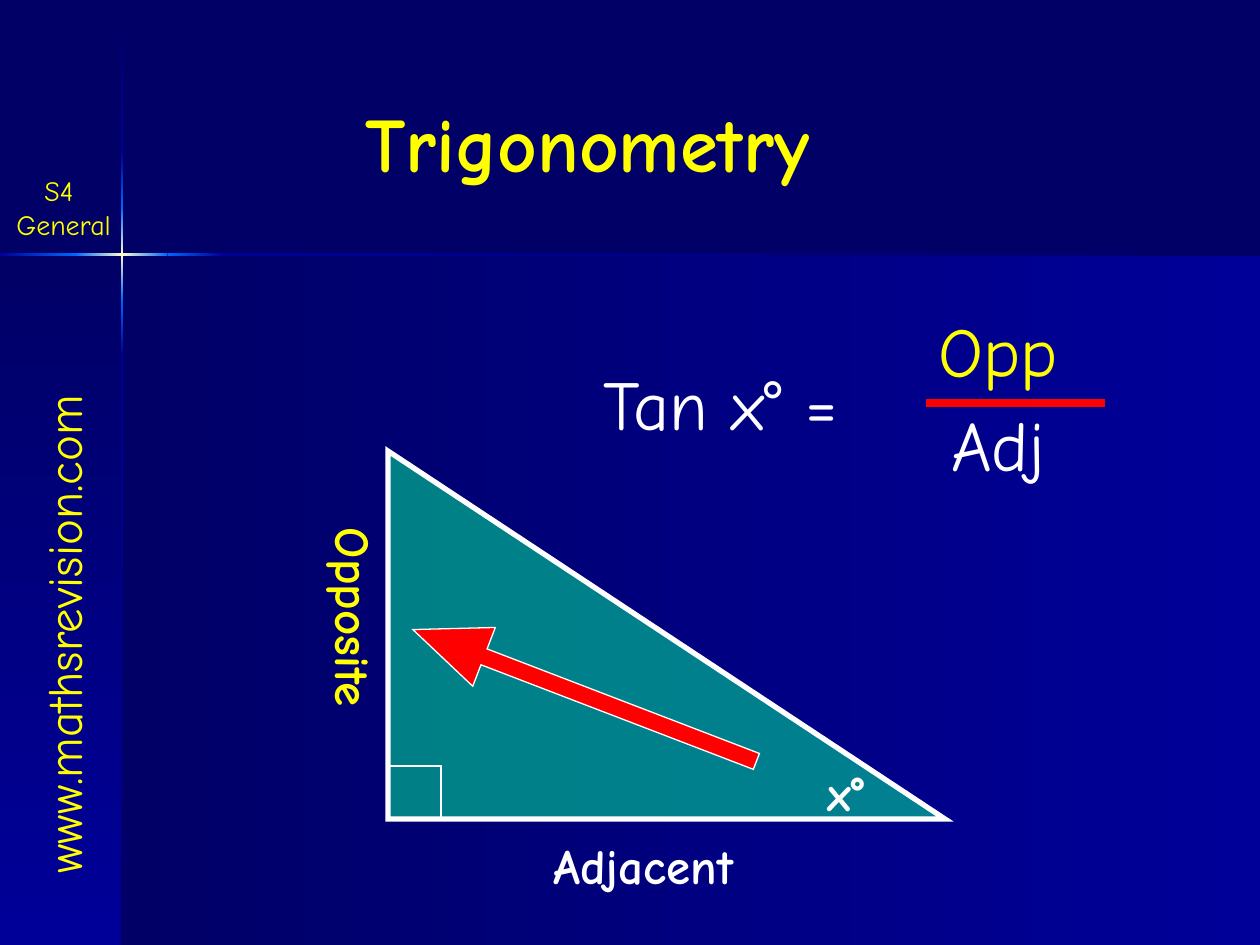
from lxml.etree import SubElement
from pptx import Presentation
from pptx.dml.color import RGBColor
from pptx.enum.shapes import MSO_CONNECTOR, MSO_SHAPE
from pptx.enum.text import MSO_ANCHOR, MSO_AUTO_SIZE, PP_ALIGN
from pptx.oxml.ns import qn
from pptx.util import Inches, Pt

NAVY = RGBColor(0x00, 0x00, 0x66)
BLUE = RGBColor(0x00, 0x00, 0x99)
BRIGHT = RGBColor(0x00, 0x66, 0xFF)
CREAM = RGBColor(0xFF, 0xFF, 0xCC)
YELLOW = RGBColor(0xFF, 0xFF, 0x00)
WHITE = RGBColor(0xFF, 0xFF, 0xFF)
RED = RGBColor(0xFF, 0x00, 0x00)
GREEN = RGBColor(0x00, 0xFF, 0x99)
FONT = "Comic Neue"

W, H = 10, 7.5
CROSS_X, CROSS_Y = 0.97, 2.02   # where the two glowing rules meet
RULE = 0.02
DOWN, RIGHT = 270, 0            # gradient directions

# Glowing rules: start, end, first colour, last colour
VERTICAL_RULE = [
    (0.01, 1.21, NAVY, BLUE),
    (1.21, 1.65, BLUE, BRIGHT),
    (1.65, CROSS_Y, BRIGHT, CREAM),
    (CROSS_Y, 2.38, CREAM, BRIGHT),
    (2.38, 2.82, BRIGHT, BLUE),
    (2.82, H, BLUE, NAVY),
]
HORIZONTAL_RULE = [
    (0, 0.6, BLUE, BRIGHT),
    (0.6, CROSS_X, BRIGHT, CREAM),
    (CROSS_X, 1.33, CREAM, BRIGHT),
    (1.33, 1.77, BRIGHT, BLUE),
    (1.77, W, BLUE, NAVY),
]

TRIANGLE = (3.08, 3.58, 4.42, 2.92)
CORNER = 0.42
ARROW = (3.18, 5.27, 2.92, 0.5)
FRACTION_BAR = (7.35, 8.77, 3.2)

# Text, box, size, colour, options
HEADINGS = [
    ("www.mathsrevision.com", (-1.69, 4.55, 4.39, 0.57), 28, YELLOW,
     dict(wrap=False, rotation=270)),
    ("Trigonometry", (2.8, 0.71, 4.11, 0.84), 44, YELLOW, dict(bold=True)),
    ("S4 \nGeneral", (0.01, 1.33, 0.99, 0.64), 16, YELLOW,
     dict(wrap=False, centred=True)),
]
FORMULA = [
    ("Tan x° =", (4.69, 2.81, 2.42, 0.77), 40, WHITE, {}),
    ("Opp", (7.35, 2.39, 1.25, 0.77), 40, YELLOW, {}),
    ("Adj", (7.45, 3.14, 1.42, 0.77), 40, WHITE, {}),
]
LABEL = dict(wrap=False, centred=True, bold=True, anchor=MSO_ANCHOR.MIDDLE)
LABELS = [
    ("x°", (6.38, 6, 0.67, 0.57), 28, WHITE, LABEL),
    ("Opposite", (2.48, 4.09, 0.67, 1.73), 28, YELLOW,
     dict(LABEL, vertical=True)),
    ("Adjacent", (4.16, 6.58, 1.89, 0.57), 28, WHITE, LABEL),
]


def add_shape(s, kind, box, fill=None, line=None, width=0):
    sp = s.shapes.add_shape(kind, *map(Inches, box))
    sp.shadow.inherit = False
    if fill is None:
        sp.fill.background()
    else:
        sp.fill.solid()
        sp.fill.fore_color.rgb = fill
    if line is None:
        sp.line.fill.background()
    else:
        sp.line.color.rgb = line
        sp.line.width = Pt(width)
        SubElement(sp.line._get_or_add_ln(), qn("a:miter"), lim="800000")
    return sp


def add_gradient(s, box, first, last, angle):
    sp = add_shape(s, MSO_SHAPE.RECTANGLE, box)
    sp.fill.gradient()
    sp.fill.gradient_angle = angle
    for stop, color, position in zip(sp.fill.gradient_stops, (first, last), (0, 1)):
        stop.color.rgb = color
        stop.position = position


def add_text(s, text, box, size, color, wrap=True, centred=False, bold=False,
             anchor=MSO_ANCHOR.TOP, rotation=0, vertical=False):
    tb = s.shapes.add_textbox(*map(Inches, box))
    tb.rotation = rotation
    tf = tb.text_frame
    tf.text = text
    tf.word_wrap = wrap
    tf.auto_size = MSO_AUTO_SIZE.SHAPE_TO_FIT_TEXT
    tf.vertical_anchor = anchor
    if vertical:
        tf.margin_left = tf.margin_right = Inches(0.05)
        tf.margin_top = tf.margin_bottom = Inches(0.1)
        tf._txBody.bodyPr.set("vert", "eaVert")
    for p in tf.paragraphs:
        p.alignment = PP_ALIGN.CENTER if centred else PP_ALIGN.LEFT
        for r in p.runs:
            r.font.name = FONT
            r.font.size = Pt(size)
            r.font.bold = bold
            r.font.color.rgb = color


def draw_background(s):
    s.background.fill.solid()
    s.background.fill.fore_color.rgb = NAVY
    add_gradient(s, (CROSS_X, CROSS_Y, W - CROSS_X, H - CROSS_Y), NAVY, BLUE, RIGHT)
    add_gradient(s, (0, CROSS_Y, CROSS_X, H - CROSS_Y), NAVY, BLUE, DOWN)
    for start, end, first, last in VERTICAL_RULE:
        box = (CROSS_X - RULE / 2, start, RULE, end - start)
        add_gradient(s, box, first, last, DOWN)
    for start, end, first, last in HORIZONTAL_RULE:
        box = (start, CROSS_Y - RULE / 2, end - start, RULE)
        add_gradient(s, box, first, last, RIGHT)


def draw_triangle(s):
    triangle = add_shape(s, MSO_SHAPE.RIGHT_TRIANGLE, TRIANGLE, GREEN, WHITE, 3)
    color = triangle.fill._xPr.find(qn("a:solidFill"))[0]
    SubElement(color, qn("a:alpha"), val="50000")
    left, top, _, height = TRIANGLE
    corner_box = (left, top + height - CORNER, CORNER, CORNER)
    add_shape(s, MSO_SHAPE.RECTANGLE, corner_box, line=WHITE, width=1.5)
    arrow = add_shape(s, MSO_SHAPE.LEFT_ARROW, ARROW, RED, WHITE, 0.75)
    arrow.adjustments[0] = 0.27
    arrow.adjustments[1] = 1.21
    arrow.rotation = 21


def draw_fraction_bar(s):
    x1, x2, y = map(Inches, FRACTION_BAR)
    bar = s.shapes.add_connector(MSO_CONNECTOR.STRAIGHT, x1, y, x2, y)
    bar.line.color.rgb = RED
    bar.line.width = Pt(4.5)
    SubElement(bar._element.spPr, qn("a:effectLst"))


def main():
    prs = Presentation()
    prs.slide_width, prs.slide_height = Inches(W), Inches(H)
    s = prs.slides.add_slide(prs.slide_layouts[6])
    draw_background(s)
    draw_triangle(s)
    draw_fraction_bar(s)
    for text, box, size, color, options in HEADINGS + FORMULA + LABELS:
        add_text(s, text, box, size, color, **options)
    prs.save("out.pptx")


if __name__ == "__main__":
    main()
